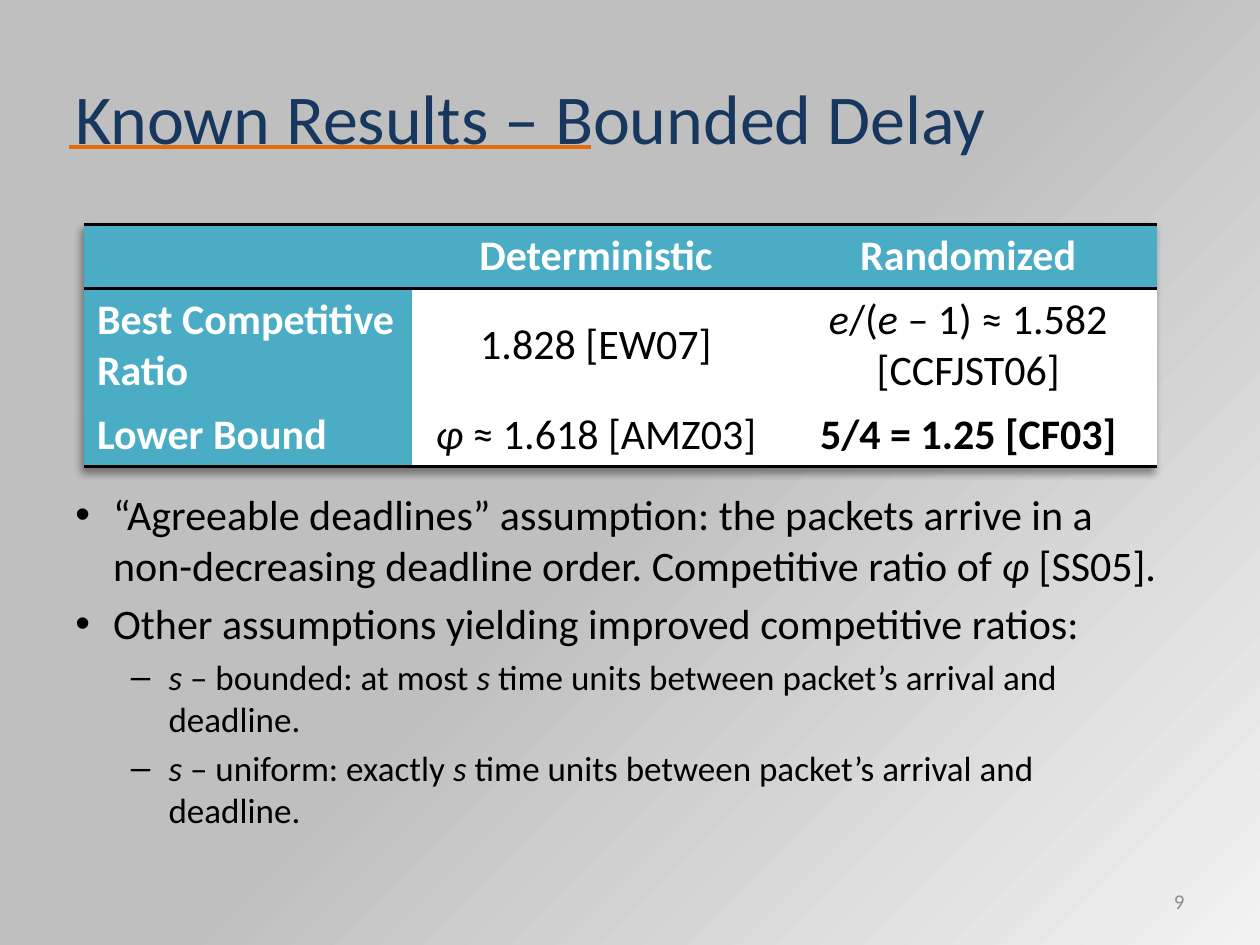
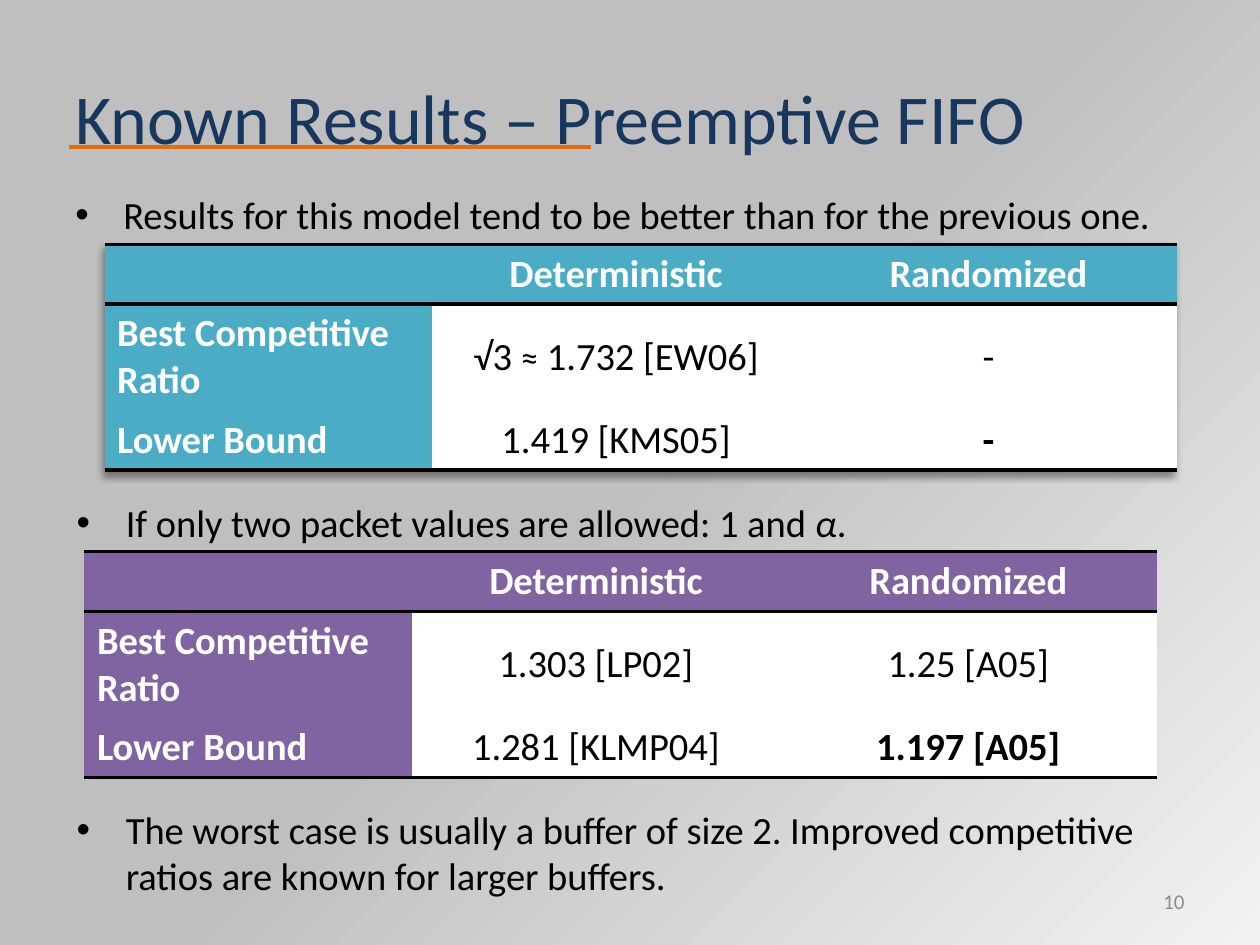
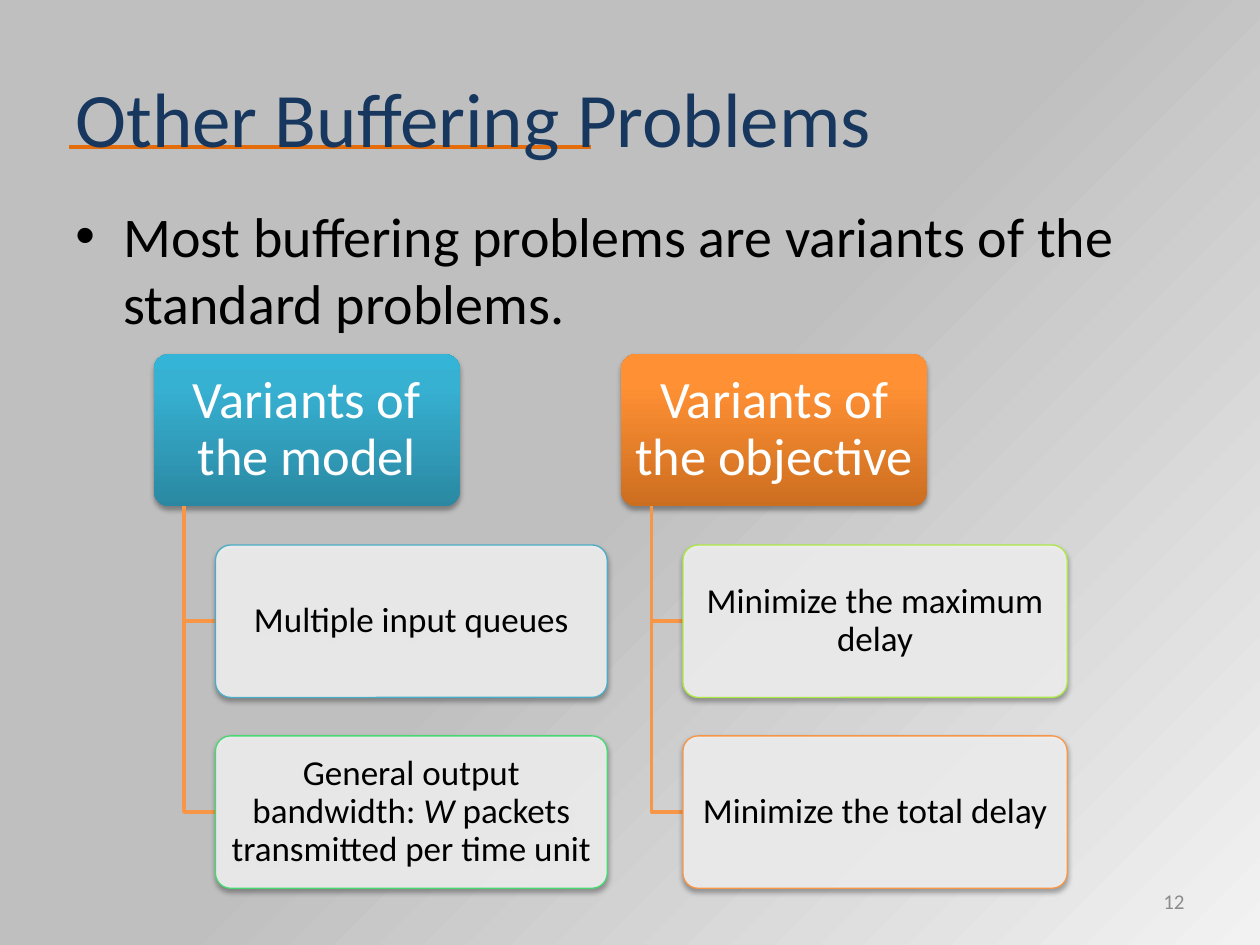
"""Build three slides on known results and variants of buffering problems."""
from dataclasses import dataclass

from lxml.etree import SubElement
from pptx import Presentation
from pptx.dml.color import RGBColor
from pptx.enum.shapes import MSO_CONNECTOR, MSO_SHAPE
from pptx.enum.text import MSO_ANCHOR, PP_ALIGN
from pptx.oxml.ns import qn
from pptx.util import Inches, Pt


@dataclass(frozen=True)
class Theme:
    font: str = "Calibri"
    title: str = "17375E"
    accent: str = "E46C0A"
    number: str = "8C8C8C"
    text: str = "000000"
    light: str = "FFFFFF"
    teal: str = "4BACC6"
    purple: str = "8064A2"
    orange: str = "F79646"
    green: str = "47D872"
    lime: str = "ACE946"
    leaf: str = "F2F2F2"
    backdrop: tuple = ((50, "BFBFBF"), (100, "F2F2F2"))
    teal_fade: tuple = ((0, "2A88A2"), (80, "37B1D2"), (100, "34B4D6"))
    orange_fade: tuple = ((0, "CC6E20"), (80, "FF9034"), (100, "FF9136"))
    title_size: int = 40
    large_title_size: int = 44
    lead_size: int = 32
    head_size: int = 30
    body_size: int = 24
    compact_size: int = 22
    detail_size: int = 20
    number_size: int = 12


THEME = Theme()
ITALIC = {"italic": True}
SMALLER = {"size": THEME.detail_size}

HEADINGS = ("", "Deterministic", "Randomized")
BEST, LOWER = "Best Competitive Ratio", "Lower Bound"
COLUMN_WIDTHS = (2.6, 2.92, 2.99)
ROW_LINES = (1, 2, 1)

BOUNDED_DELAY = (
    HEADINGS,
    (BEST, "1.828 [EW07]",
     [("e", ITALIC), "/(", ("e", ITALIC), " – 1) ≈ 1.582 [CCFJST06]"]),
    (LOWER, [("φ", ITALIC), " ≈ 1.618 [AMZ03]"], "5/4 = 1.25 [CF03]"),
)
PREEMPTIVE_FIFO = (
    HEADINGS,
    (BEST, ["√3 ", ("≈", SMALLER), " 1.732 [EW06]"], "-"),
    (LOWER, "1.419 [KMS05]", "-"),
)
TWO_VALUES = (
    HEADINGS,
    (BEST, "1.303 [LP02]", "1.25 [A05]"),
    (LOWER, "1.281 [KLMP04]", "1.197 [A05]"),
)

ASSUMPTIONS = (
    ["“Agreeable deadlines” assumption: the packets arrive in a non-decreasing "
     "deadline order. Competitive ratio of ", ("φ", ITALIC), " [SS05]."],
    "Other assumptions yielding improved competitive ratios:",
)
BOUNDS = (
    [("s", ITALIC), " – bounded: at most ", ("s", ITALIC),
     " time units between packet’s arrival and deadline."],
    [("s", ITALIC), " – uniform: exactly ", ("s", ITALIC),
     " time units between packet’s arrival and deadline."],
)
FIFO_NOTES = (
    ((0.5, 1.47, 8.75, 0.47), 0.38,
     "Results for this model tend to be better than for the previous one."),
    ((0.51, 3.91, 8.91, 0.71), 0.39,
     ["If only two packet values are allowed: 1 and ", ("α", ITALIC), "."]),
    ((0.51, 6.35, 8.91, 0.92), 0.39,
     "The worst case is usually a buffer of size 2. Improved competitive "
     "ratios are known for larger buffers."),
)
VARIANTS = (
    {"head": "Variants of the model", "fade": THEME.teal_fade,
     "left": 1.22, "leaf_width": 3.11,
     "leaves": (("Multiple input queues", THEME.teal),
                (["General output bandwidth: ", ("W", ITALIC),
                  " packets transmitted per time unit"], THEME.green))},
    {"head": "Variants of the objective", "fade": THEME.orange_fade,
     "left": 4.93, "leaf_width": 3.05,
     "leaves": (("Minimize the maximum delay", THEME.lime),
                ("Minimize the total delay", THEME.orange))},
)
TREE_TOP, TREE_PITCH = 2.81, 1.515
BOX_HEIGHT, HEAD_WIDTH = 1.21, 2.43
TRUNK_INDENT, LEAF_INDENT = 0.24, 0.49


def rgb(color):
    return RGBColor.from_string(color)


def inches(values):
    return [Inches(value) for value in values]


def write(frame, text, *, size, color=THEME.text, bold=False, align=PP_ALIGN.LEFT,
          anchor=MSO_ANCHOR.TOP, insets=None, bullet=None, indent=0.0, hang=0.3,
          line_spacing=None):
    """Append one paragraph of plain or mixed runs to a text frame."""
    frame.word_wrap = True
    frame.vertical_anchor = anchor
    if insets:
        frame.margin_left = frame.margin_right = Inches(insets[0])
        frame.margin_top = frame.margin_bottom = Inches(insets[1])
    paragraph = frame.add_paragraph() if frame.text else frame.paragraphs[0]
    paragraph.alignment = align
    if line_spacing:
        paragraph.line_spacing = line_spacing
    if bullet:
        paragraph.space_before = Pt(size * 0.2)
        properties = paragraph._p.get_or_add_pPr()
        properties.set("marL", str(Inches(indent)))
        properties.set("indent", str(-Inches(hang)))
        SubElement(properties, qn("a:buFont"), typeface="Arial")
        SubElement(properties, qn("a:buChar"), char=bullet)
    for piece in [text] if isinstance(text, str) else text:
        words, changes = (piece, {}) if isinstance(piece, str) else piece
        run = paragraph.add_run()
        run.text = words
        run.font.name = THEME.font
        run.font.size = Pt(changes.get("size", size))
        run.font.bold = bold
        run.font.italic = changes.get("italic", False)
        run.font.color.rgb = rgb(color)


def add_text(slide, box, text, **style):
    frame = slide.shapes.add_textbox(*inches(box)).text_frame
    write(frame, text, **style)
    return frame


def set_gradient(fill, owner, stops, angle):
    fill.gradient()
    fill.gradient_angle = angle
    stop_list = next(owner.iter(qn("a:gsLst")))
    for stop in list(stop_list):
        stop_list.remove(stop)
    for position, color in stops:
        stop = SubElement(stop_list, qn("a:gs"), pos=str(position * 1000))
        SubElement(stop, qn("a:srgbClr"), val=color)


def add_shadow(effects, blur, distance, direction, opacity):
    shadow = SubElement(effects, qn("a:outerShdw"), blurRad=str(Pt(blur)),
                        dist=str(Pt(distance)), dir=str(direction * 60000),
                        algn="ctr", rotWithShape="0")
    tone = SubElement(shadow, qn("a:srgbClr"), val=THEME.text)
    SubElement(tone, qn("a:alpha"), val=str(opacity * 1000))


def add_slide(deck, title, number, title_size=THEME.title_size):
    slide = deck.slides.add_slide(deck.slide_layouts[6])
    underline = slide.shapes.add_connector(
        MSO_CONNECTOR.STRAIGHT, *inches((0.55, 1.17, 4.69, 1.17)))
    underline.line.color.rgb = rgb(THEME.accent)
    underline.line.width = Pt(2.25)
    SubElement(underline._element.spPr, qn("a:effectLst"))
    add_text(slide, (0.5, 0.3, 9, 1.25), title, size=title_size,
             color=THEME.title, anchor=MSO_ANCHOR.MIDDLE)
    add_text(slide, (7.17, 6.95, 2.33, 0.4), str(number), size=THEME.number_size,
             color=THEME.number, align=PP_ALIGN.RIGHT, anchor=MSO_ANCHOR.MIDDLE)
    return slide


def add_rule(cell, edge):
    rule = SubElement(cell._tc.get_or_add_tcPr(), qn(f"a:{edge}"), w=str(Pt(2)))
    SubElement(SubElement(rule, qn("a:solidFill")), qn("a:srgbClr"), val=THEME.text)


def add_results(slide, results, left, top, size, color, shadow=False):
    heights = [lines * size * 1.22 / 72 + 0.1 for lines in ROW_LINES]
    table = slide.shapes.add_table(
        len(results), len(HEADINGS),
        *inches((left, top, sum(COLUMN_WIDTHS), sum(heights)))).table
    properties = table._tbl.tblPr
    style = properties.find(qn("a:tableStyleId"))
    style.text = "{2D5ABB26-0587-4C30-8999-92F81FD0307C}"
    if shadow:
        effects = SubElement(properties, qn("a:effectLst"))
        style.addprevious(effects)
        add_shadow(effects, 4, 3, 120, 40)
    for column, width in zip(table.columns, COLUMN_WIDTHS):
        column.width = Inches(width)
    last = len(results) - 1, len(HEADINGS) - 1
    for i, (row, height) in enumerate(zip(results, heights)):
        table.rows[i].height = Inches(height)
        for j, text in enumerate(row):
            cell = table.cell(i, j)
            label = i == 0 or j == 0
            write(cell.text_frame, text, size=size, bold=label or (i, j) == last,
                  color=THEME.light if label else THEME.text,
                  align=PP_ALIGN.CENTER if j else PP_ALIGN.LEFT)
            cell.vertical_anchor = MSO_ANCHOR.MIDDLE
            if i == 0:
                add_rule(cell, "lnT")
            if i in (0, last[0]):
                add_rule(cell, "lnB")
            cell.fill.solid()
            cell.fill.fore_color.rgb = rgb(color if label else THEME.light)


def add_box(slide, box, text, insets, **style):
    shape = slide.shapes.add_shape(MSO_SHAPE.ROUNDED_RECTANGLE, *inches(box))
    shape.adjustments[0] = 0.1
    shape.shadow.inherit = False
    add_shadow(shape._element.spPr.find(qn("a:effectLst")), 3.1, 1.8, 90, 35)
    write(shape.text_frame, text, insets=insets, align=PP_ALIGN.CENTER,
          anchor=MSO_ANCHOR.MIDDLE, line_spacing=0.9, **style)
    return shape


def add_branch(slide, trunk, start, leaf_left, middle):
    outline = slide.shapes.build_freeform(Inches(trunk), Inches(start))
    outline.add_line_segments(
        [inches((trunk, middle)), inches((leaf_left, middle))], close=False)
    branch = outline.convert_to_shape()
    branch.fill.background()
    branch.line.color.rgb = rgb(THEME.orange)
    branch.line.width = Pt(2)
    branch.shadow.inherit = False


def add_variant(slide, variant):
    left = variant["left"]
    head = add_box(slide, (left, TREE_TOP, HEAD_WIDTH, BOX_HEIGHT), variant["head"],
                   (0.06, 0.04), size=THEME.head_size, color=THEME.light)
    set_gradient(head.fill, head._element, variant["fade"], 90)
    head.line.fill.background()
    leaf_left = left + LEAF_INDENT
    for step, (text, color) in enumerate(variant["leaves"], start=1):
        top = TREE_TOP + step * TREE_PITCH
        add_branch(slide, left + TRUNK_INDENT, TREE_TOP + BOX_HEIGHT,
                   leaf_left, top + BOX_HEIGHT / 2)
        leaf = add_box(slide, (leaf_left, top, variant["leaf_width"], BOX_HEIGHT),
                       text, (0.04, 0.03), size=THEME.detail_size)
        leaf.fill.solid()
        leaf.fill.fore_color.rgb = rgb(THEME.leaf)
        tone = next(leaf._element.spPr.iter(qn("a:srgbClr")))
        SubElement(tone, qn("a:alpha"), val="90000")
        leaf.line.color.rgb = rgb(color)
        leaf.line.width = Pt(0.75)


def build_bounded_delay(deck):
    slide = add_slide(deck, "Known Results – Bounded Delay", 9)
    first, second = ASSUMPTIONS
    top_level = {"size": THEME.body_size, "bullet": "•", "indent": 0.3}
    frame = add_text(slide, (0.5, 3.83, 8.83, 3.31), first, **top_level)
    write(frame, second, **top_level)
    for bound in BOUNDS:
        write(frame, bound, size=THEME.detail_size, bullet="–", indent=0.74)
    add_results(slide, BOUNDED_DELAY, 0.67, 1.78, THEME.body_size, THEME.teal,
                shadow=True)


def build_preemptive_fifo(deck):
    slide = add_slide(deck, "Known Results – Preemptive FIFO", 10)
    add_results(slide, PREEMPTIVE_FIFO, 0.83, 1.94, THEME.compact_size, THEME.teal,
                shadow=True)
    add_results(slide, TWO_VALUES, 0.67, 4.38, THEME.compact_size, THEME.purple)
    for box, indent, note in FIFO_NOTES:
        add_text(slide, box, note, size=THEME.compact_size, bullet="•",
                 indent=indent, hang=indent)


def build_other_problems(deck):
    slide = add_slide(deck, "Other Buffering Problems", 12, THEME.large_title_size)
    add_text(slide, (0.5, 1.55, 9, 4.95),
             "Most buffering problems are variants of the standard problems.",
             size=THEME.lead_size, bullet="•", indent=0.38, hang=0.38)
    for variant in VARIANTS:
        add_variant(slide, variant)


def main():
    deck = Presentation()
    deck.slide_width, deck.slide_height = Inches(10), Inches(7.5)
    master = deck.slide_master
    set_gradient(master.background.fill, master.element, THEME.backdrop, 315)
    build_bounded_delay(deck)
    build_preemptive_fifo(deck)
    build_other_problems(deck)
    deck.save("out.pptx")


if __name__ == "__main__":
    main()
